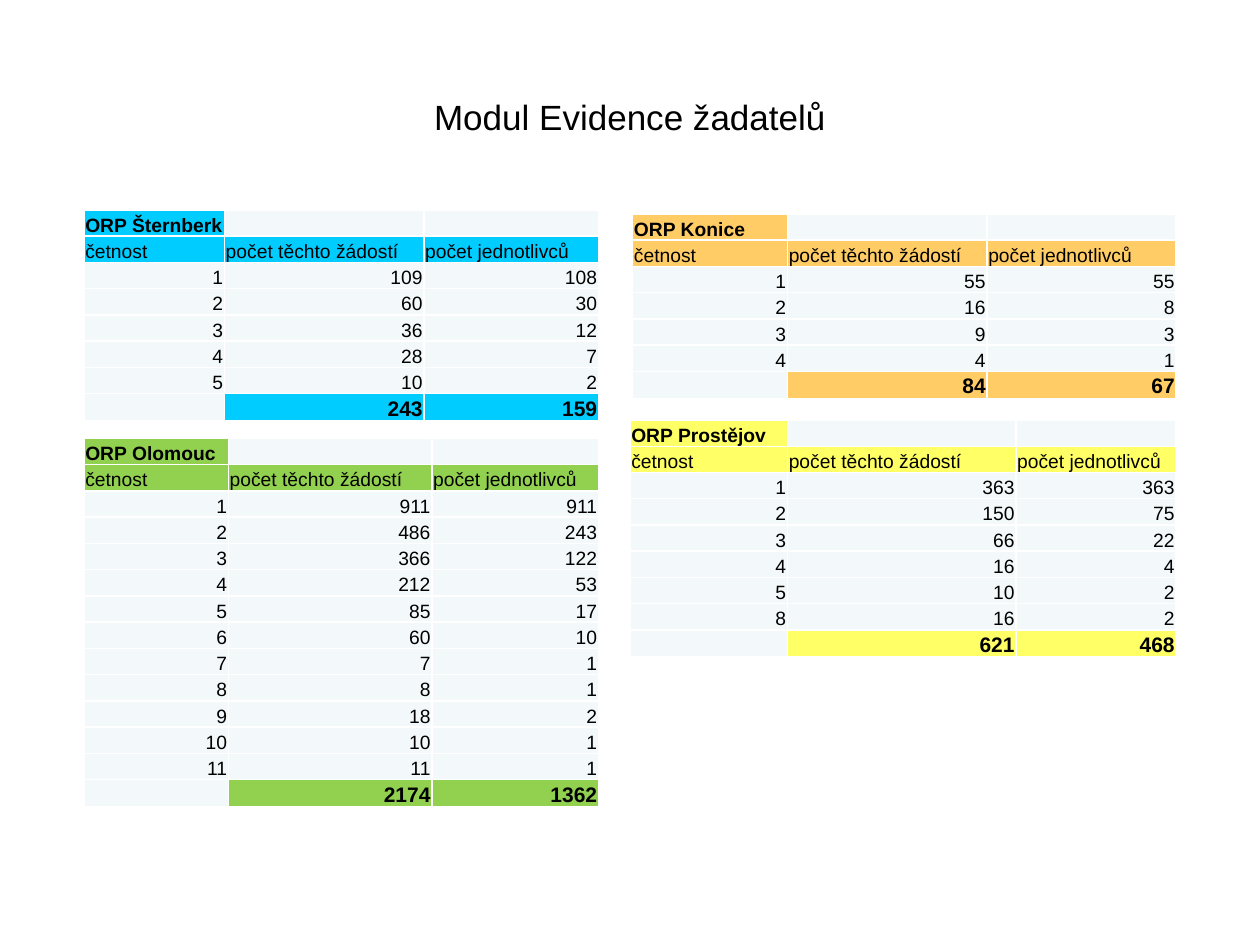
from dataclasses import dataclass

from lxml import etree
from pptx import Presentation
from pptx import util as u
from pptx.dml.color import RGBColor
from pptx.enum import text
from pptx.oxml import ns

EMU_PER_PX = 9525
ROW_HEIGHT = 20
HEADINGS = ("četnost", "počet těchto žádostí", "počet jednotlivců")


@dataclass(frozen=True)
class Theme:
    font: str = "Arial"
    ink: str = "000000"
    border: str = "FFFFFF"
    cell: str = "F3F9FA"
    blue: str = "00CCFF"
    green: str = "92D050"
    orange: str = "FFCC66"
    yellow: str = "FFFF66"
    title_size: int = 20
    body_size: int = 11
    total_size: int = 12
    border_width: int = 1


THEME = Theme()


@dataclass(frozen=True)
class District:
    name: str
    color: str
    left: int
    top: int
    widths: tuple[int, int, int]
    counts: tuple[tuple[int, int, int], ...]  # frequency, requests, individuals


DISTRICTS = (
    District("ORP Šternberk", THEME.blue, 64, 160, (107, 152, 133),
             ((1, 109, 108), (2, 60, 30), (3, 36, 12), (4, 28, 7), (5, 10, 2))),
    District("ORP Olomouc", THEME.green, 64, 334, (110, 155, 127),
             ((1, 911, 911), (2, 486, 243), (3, 366, 122), (4, 212, 53),
              (5, 85, 17), (6, 60, 10), (7, 7, 1), (8, 8, 1), (9, 18, 2),
              (10, 10, 1), (11, 11, 1))),
    District("ORP Konice", THEME.orange, 482, 163, (118, 152, 144),
             ((1, 55, 55), (2, 16, 8), (3, 9, 3), (4, 4, 1))),
    District("ORP Prostějov", THEME.yellow, 480, 320, (120, 174, 122),
             ((1, 363, 363), (2, 150, 75), (3, 66, 22), (4, 16, 4),
              (5, 10, 2), (8, 16, 2))),
)


def px(length: int) -> u.Emu:
    return u.Emu(length * EMU_PER_PX)


def format_run(run, size: int, bold: bool = False) -> None:
    run.font.name = THEME.font
    run.font.size = u.Pt(size)
    run.font.bold = bold
    run.font.color.rgb = RGBColor.from_string(THEME.ink)


def add_borders(cell) -> None:
    properties = cell._tc.get_or_add_tcPr()
    for index, side in enumerate(("lnL", "lnR", "lnT", "lnB")):
        line = etree.Element(ns.qn(f"a:{side}"), w=str(u.Pt(THEME.border_width)))
        fill = etree.SubElement(line, ns.qn("a:solidFill"))
        etree.SubElement(fill, ns.qn("a:srgbClr"), val=THEME.border)
        properties.insert(index, line)


def fill_cell(cell, value: str, color: str, size: int, bold: bool,
              align: text.PP_ALIGN) -> None:
    cell.margin_left = cell.margin_right = cell.margin_top = px(1)
    cell.margin_bottom = 0
    cell.vertical_anchor = text.MSO_ANCHOR.BOTTOM
    cell.fill.solid()
    cell.fill.fore_color.rgb = RGBColor.from_string(color)
    add_borders(cell)
    paragraph = cell.text_frame.paragraphs[0]
    if value:
        paragraph.text = value
        paragraph.alignment = align
        format_run(paragraph.runs[0], size, bold)
    else:
        # An empty cell at the default size would stretch its row.
        etree.SubElement(paragraph._p, ns.qn("a:endParaRPr"), sz=str(size * 100))


def add_district(slide, district: District) -> None:
    totals = [str(sum(column)) for column in list(zip(*district.counts))[1:]]
    rows = [(district.name, "", ""), HEADINGS,
            *(tuple(map(str, row)) for row in district.counts), ("", *totals)]
    last = len(rows) - 1
    table = slide.shapes.add_table(
        len(rows), len(HEADINGS), px(district.left), px(district.top),
        px(sum(district.widths)), px(ROW_HEIGHT * len(rows))).table
    table.first_row = table.horz_banding = False
    for column, width in zip(table.columns, district.widths):
        column.width = px(width)
    for row_index, values in enumerate(rows):
        table.rows[row_index].height = px(ROW_HEIGHT)
        colored = row_index in (0, 1, last)
        size = THEME.total_size if row_index == last else THEME.body_size
        align = text.PP_ALIGN.LEFT if row_index < 2 else text.PP_ALIGN.RIGHT
        for column_index, value in enumerate(values):
            color = district.color if colored and value else THEME.cell
            fill_cell(table.cell(row_index, column_index), value, color, size,
                      row_index in (0, last), align)


def add_title(slide, title: str) -> None:
    frame = slide.shapes.add_textbox(px(48), px(29), px(864), px(120)).text_frame
    frame.word_wrap = True
    frame.vertical_anchor = text.MSO_ANCHOR.MIDDLE
    frame.text = title
    paragraph = frame.paragraphs[0]
    paragraph.alignment = text.PP_ALIGN.CENTER
    format_run(paragraph.runs[0], THEME.title_size)


def main() -> None:
    presentation = Presentation()
    presentation.slide_width, presentation.slide_height = px(960), px(720)
    slide = presentation.slides.add_slide(presentation.slide_layouts[6])
    for district in DISTRICTS:
        add_district(slide, district)
    add_title(slide, "Modul Evidence žadatelů")
    presentation.save("out.pptx")


if __name__ == "__main__":
    main()
